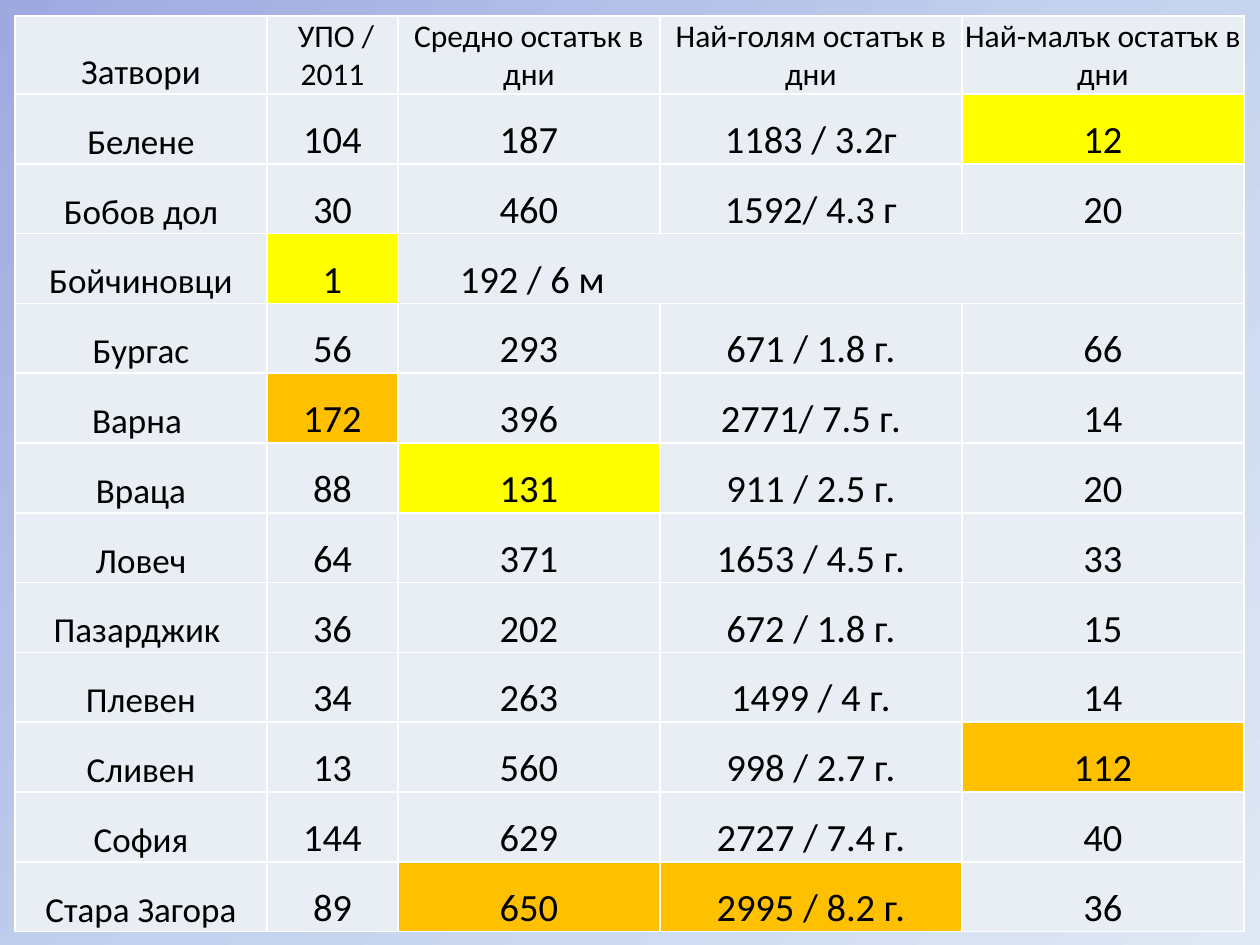
from copy import deepcopy

from lxml import etree
from pptx import Presentation
from pptx.dml.color import RGBColor
from pptx.enum.text import MSO_ANCHOR, PP_ALIGN
from pptx.oxml.ns import qn
from pptx.util import Pt

BOTTOM = MSO_ANCHOR.BOTTOM
CENTER, LEFT = PP_ALIGN.CENTER, PP_ALIGN.LEFT
PALE, YELLOW, ORANGE = "E9EDF4", "FFFF00", "FFC000"


def px(n):
    return round(n * 914400 / 126)


def rgb(color):
    return RGBColor.from_string(color)


prs = Presentation()
prs.slide_width, prs.slide_height = px(1260), px(945)
s = prs.slides.add_slide(prs.slide_layouts[6])

# Diagonal three-stop background
fill = s.background.fill
fill.gradient()
fill.gradient_angle = 315
stop_list = s.element.find(".//" + qn("a:gsLst"))
stop_list.append(deepcopy(stop_list[-1]))
background = [(0, "9EA9E0"), (0.5, "C2D1ED"), (1, "E1E8F5")]
for stop, (position, color) in zip(fill.gradient_stops, background):
    stop.position = position
    stop.color.rgb = rgb(color)

# Prisons, early releases in 2011, remaining days
rows = [
    ["Затвори", " УПО / 2011", "Средно остатък в дни",
     "Най-голям остатък в дни", "Най-малък остатък в дни"],
    ["Белене", "104", "187", "1183 / 3.2г", "12"],
    ["Бобов дол", "30", "460", "1592/ 4.3 г", "20"],
    ["Бойчиновци", "1", "192 / 6 м", "", ""],
    ["Бургас", "56", "293", "671 / 1.8 г.", "66"],
    ["Варна ", "172", "396", "2771/ 7.5 г.", "14"],
    ["Враца", "88", "131", "911 / 2.5 г.", "20"],
    ["Ловеч", "64", "371", "1653 / 4.5 г.", "33"],
    ["Пазарджик ", "36", "202", "672 / 1.8 г.", "15"],
    ["Плевен", "34", "263", "1499 / 4 г.", "14"],
    ["Сливен", "13", "560", "998 / 2.7 г.", "112"],
    ["София", "144", "629", "2727 / 7.4 г.", "40"],
    ["Стара Загора", "89", "650", "2995 / 8.2 г.", "36"],
]
# Lowest values in yellow, highest in orange
highlights = {
    (1, 4): YELLOW, (3, 1): YELLOW, (6, 2): YELLOW,
    (5, 1): ORANGE, (10, 4): ORANGE, (12, 2): ORANGE, (12, 3): ORANGE,
}
MERGED = (3, 2)

# Table grid
widths = [252, 131, 262, 302, 282]
height, header = 916, 78
table = s.shapes.add_table(len(rows), len(widths), px(15), px(16),
                           px(sum(widths)), px(height)).table
table.first_row = table.horz_banding = False
for column, width in zip(table.columns, widths):
    column.width = px(width)
for i, row in enumerate(table.rows):
    row.height = px(header if i == 0 else (height - header) / (len(rows) - 1))
table.cell(3, 2).merge(table.cell(3, 4))

# Cells
for i, values in enumerate(rows):
    for j, value in enumerate(values):
        cell = table.cell(i, j)
        tcPr = cell._tc.get_or_add_tcPr()
        for side in ("lnL", "lnR", "lnT", "lnB"):
            ln = etree.SubElement(tcPr, qn("a:" + side), w=str(Pt(1)))
            solid = etree.SubElement(ln, qn("a:solidFill"))
            etree.SubElement(solid, qn("a:srgbClr"), val="FFFFFF")
        cell.fill.solid()
        cell.fill.fore_color.rgb = rgb(highlights.get((i, j), PALE))
        cell.vertical_anchor = BOTTOM
        cell.margin_left = px(62 if (i, j) == MERGED else 1)
        cell.margin_right = cell.margin_top = px(1)
        cell.margin_bottom = 0
        if not value:
            continue
        p = cell.text_frame.paragraphs[0]
        p.text = value
        p.alignment = LEFT if (i, j) == MERGED else CENTER
        font = p.runs[0].font
        font.name = "Calibri"
        font.size = Pt(20 if j == 0 else 18 if i == 0 else 22)
        font.color.rgb = rgb("000000")

prs.save("out.pptx")
